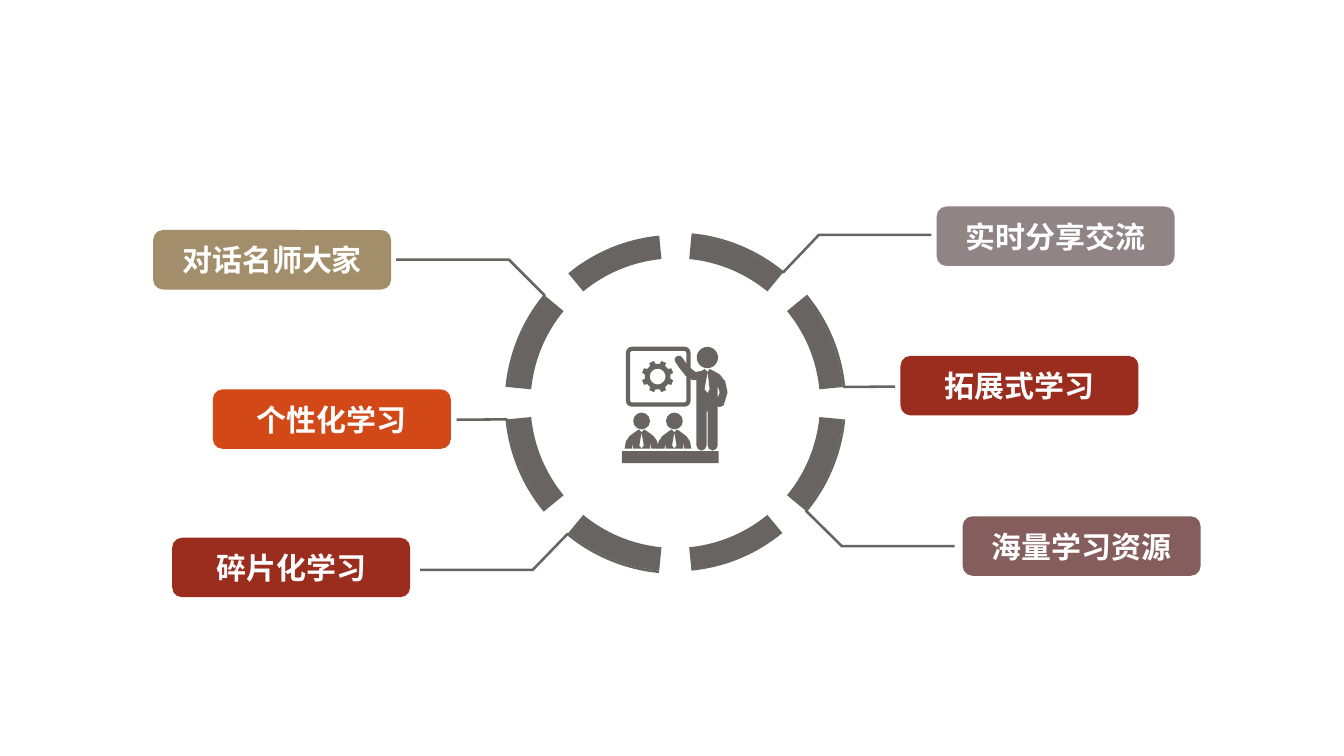
"""Build a slide with six learning features linked to a ring around a classroom icon."""
import math

import lxml.etree
import pptx
import pptx.dml.color
import pptx.enum.shapes
import pptx.enum.text
import pptx.oxml.ns
import pptx.util

Pt = pptx.util.Pt
RGBColor = pptx.dml.color.RGBColor
SHAPE = pptx.enum.shapes.MSO_SHAPE

WHITE = RGBColor(0xFF, 0xFF, 0xFF)
GREY = RGBColor(0x69, 0x64, 0x64)
MAUVE = RGBColor(0x91, 0x84, 0x85)
PLUM = RGBColor(0x85, 0x5D, 0x5D)
RED = RGBColor(0x9B, 0x2D, 0x1F)
ORANGE = RGBColor(0xD3, 0x48, 0x17)
SAND = RGBColor(0xA2, 0x8E, 0x6A)

RING_X, RING_Y = 482.4, 288
OUTER, INNER, LEADER_RADIUS = 120.2, 103.4, 121
SECTOR, GAP, SWEEP = 45, 5.5, 34

FEATURES = [
    ("实时分享交流", 669, 147.5, MAUVE, 665.3, 167.8, -80.4, 1),
    ("海量学习资源", 687.6, 368.8, PLUM, 681.8, 390.2, -80.4, 7),
    ("拓展式学习", 643.2, 254.2, RED, 639.4, 276.2, 0, 0),
    ("个性化学习", 152, 278.1, ORANGE, 326.2, 299.8, 0, 4),
    ("对话名师大家", 109.4, 164.3, SAND, 283, 185.4, 80.4, 3),
    ("碎片化学习", 123, 384.1, RED, 300.2, 407, 80.4, 5),
]

TEACHER = [
    (28.1, 10.8), (25.2, 9.4), (23.8, 11.5), (21.6, 9.4), (19.4, 10.8),
    (15.1, 11.5), (10, 7.4), (5.8, 1.4), (4.3, 0), (2.2, 0), (0.2, 2),
    (0.7, 4.3), (3.6, 8.6), (8.2, 14.4), (13, 17.3), (15.8, 17.3),
    (15.8, 64), (16.8, 66.5), (19.4, 67.7), (22, 66.5), (23, 64),
    (23, 39.6), (23.8, 39.6), (23.8, 64), (24.8, 66.5), (27.4, 67.7),
    (30, 66.5), (31, 64), (31, 36), (32.4, 36.7), (35.3, 35.3),
    (38, 26), (36.3, 18.2), (32.4, 13.3),
]
TEACHER_TIE = [(23.8, 11.5), (25.2, 23.8), (23.8, 26.6), (21.6, 23.8)]
TEACHER_ARM = [(31, 30.2), (32.4, 26), (31, 21.6)]
STUDENT_HALF = [
    (0, 2.2), (1.8, 0), (4, 1.4), (8.6, 4.8), (11.2, 8.6), (12.1, 13.7),
    (7, 13.7), (6.2, 9.4), (6.2, 13.7), (0, 13.7),
]
STUDENT_TIE = [(0, 2.2), (-1.6, 11.5), (0, 13.7), (1.6, 11.5)]


def polar(x, y, radius, degrees):
    angle = math.radians(degrees)
    return x + radius * math.cos(angle), y - radius * math.sin(angle)


def arc(x, y, radius, start, sweep, steps=16):
    return [polar(x, y, radius, start + sweep * i / steps) for i in range(steps + 1)]


def shift(points, dx, dy):
    return [(x + dx, y + dy) for x, y in points]


class Sketch:
    """Current slide with its shared font, size and drawing colour."""

    font, size, color = "Noto Sans CJK SC", 21.4, GREY

    def __init__(self, s):
        self.s = s

    def shape(self, kind, x, y, w, h, color=None):
        sp = self.s.shapes.add_shape(kind, Pt(x), Pt(y), Pt(w), Pt(h))
        sp.shadow.inherit = False
        sp.fill.solid()
        sp.fill.fore_color.rgb = color or self.color
        sp.line.fill.background()
        return sp

    def frame(self, x, y, w, h, weight):
        sp = self.shape(SHAPE.ROUNDED_RECTANGLE, x, y, w, h)
        sp.adjustments[0] = 0.07
        self.outline(sp, weight)

    def outline(self, sp, weight):
        sp.fill.background()
        sp.line.color.rgb = self.color
        sp.line.width = Pt(weight)

    def label(self, text, x, y, color):
        sp = self.shape(SHAPE.ROUNDED_RECTANGLE, x, y, 170, 42.5, color)
        tf = sp.text_frame
        tf.word_wrap = False
        tf.vertical_anchor = pptx.enum.text.MSO_ANCHOR.MIDDLE
        tf.text = text
        p = tf.paragraphs[0]
        p.alignment = pptx.enum.text.PP_ALIGN.CENTER
        r = p.runs[0]
        r.font.size = Pt(self.size)
        r.font.bold = True
        r.font.color.rgb = WHITE
        r.font.name = self.font
        ea = lxml.etree.SubElement(r.font._element, pptx.oxml.ns.qn("a:ea"))
        ea.set("typeface", self.font)

    def freeform(self, contours, close=True):
        paths = [[(Pt(x), Pt(y)) for x, y in points] for points in contours]
        builder = self.s.shapes.build_freeform(*paths[0][0])
        builder.add_line_segments(paths[0][1:], close=close)
        for path in paths[1:]:
            builder.move_to(*path[0])
            builder.add_line_segments(path[1:], close=close)
        sp = builder.convert_to_shape()
        sp.shadow.inherit = False
        return sp

    def solid(self, *contours):
        sp = self.freeform(contours)
        sp.fill.solid()
        sp.fill.fore_color.rgb = self.color
        sp.line.fill.background()

    def leader(self, x, y, run, sector):
        points = [(x, y)] + ([(x + run, y)] if run else [])
        points += arc(RING_X, RING_Y, LEADER_RADIUS, sector * SECTOR + GAP, SWEEP)
        self.outline(self.freeform([points], close=False), 1.8)

    def ring(self):
        for sector in range(8):
            start = sector * SECTOR + GAP
            outer = arc(RING_X, RING_Y, OUTER, start, SWEEP)
            inner = arc(RING_X, RING_Y, INNER, start, SWEEP)
            self.solid(outer + inner[::-1])

    def gear(self, x, y):
        profile = [(9.2, -13), (11.4, -9), (11.4, 9), (9.2, 13)]
        teeth = [
            polar(x, y, radius, 22.5 + 45 * tooth + offset)
            for tooth in range(8)
            for radius, offset in profile
        ]
        self.solid(teeth, arc(x, y, 5.6, 360, -360, 32))

    def student(self, x):
        self.shape(SHAPE.OVAL, x - 6, 294.7, 12, 12)
        left = [(-dx, dy) for dx, dy in STUDENT_HALF[::-1]]
        self.solid(shift(STUDENT_HALF + left, x, 306.7), shift(STUDENT_TIE, x, 306.7))

    def teacher(self, x, y):
        self.solid(*(shift(part, x, y) for part in (TEACHER, TEACHER_TIE, TEACHER_ARM)))
        self.shape(SHAPE.OVAL, x + 16, y - 6.4, 15.2, 15.2)


def main():
    prs = pptx.Presentation()
    prs.slide_width, prs.slide_height = Pt(960), Pt(540)
    sketch = Sketch(prs.slides.add_slide(prs.slide_layouts[6]))
    for text, x, y, color, *link in FEATURES:
        sketch.label(text, x, y, color)
        sketch.leader(*link)
    sketch.ring()
    sketch.frame(448.6, 249.2, 43.2, 39.8, 3)
    sketch.gear(469.8, 269)
    sketch.teacher(481.7, 254.2)
    for x in (458.3, 481.7):
        sketch.student(x)
    sketch.shape(SHAPE.RECTANGLE, 444.2, 322.2, 69.1, 8.6)
    prs.save("out.pptx")


if __name__ == "__main__":
    main()
